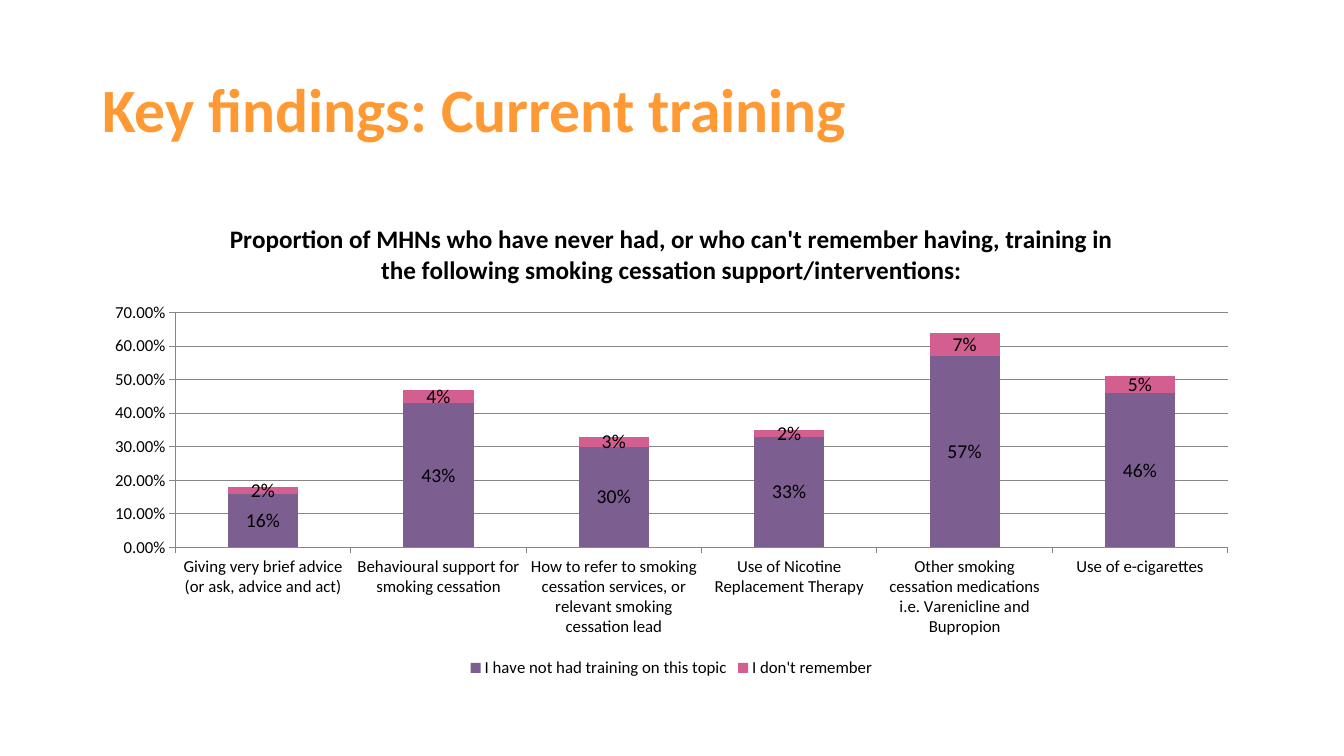
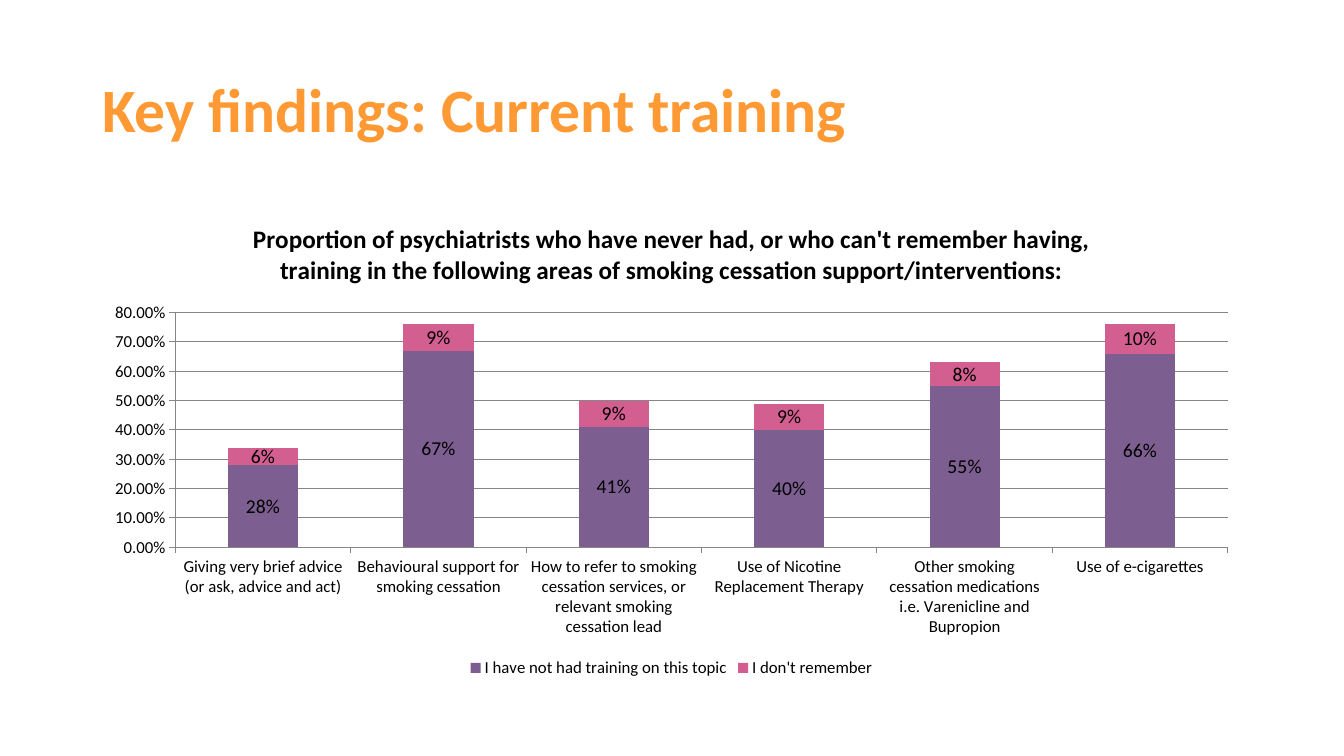
from pptx import Presentation
from pptx.chart.data import CategoryChartData
from pptx.dml.color import RGBColor
from pptx.enum.chart import XL_CHART_TYPE, XL_LABEL_POSITION, XL_LEGEND_POSITION, XL_TICK_MARK
from pptx.enum.text import MSO_ANCHOR, MSO_AUTO_SIZE, PP_ALIGN
from pptx.util import Pt

STACKED = XL_CHART_TYPE.COLUMN_STACKED
LABEL_CENTER = XL_LABEL_POSITION.CENTER
LEGEND_BOTTOM = XL_LEGEND_POSITION.BOTTOM
TICK_OUT = XL_TICK_MARK.OUTSIDE
TICK_NONE = XL_TICK_MARK.NONE
MIDDLE = MSO_ANCHOR.MIDDLE
NO_FIT = MSO_AUTO_SIZE.NONE
LEFT = PP_ALIGN.LEFT

EMU_PER_PX = 914400 / 100.8
FONT = "Calibri"
ORANGE, BLACK, GREY = "FF9933", "000000", "868686"
PURPLE, PINK = "7D5E90", "D25F90"

TITLE = "Key findings: Current training"
TITLE_AREA = (92, 40, 1159, 146)
CHART_AREA = (92, 202, 1159, 480)
TOPICS = [
    "Giving very brief advice (or ask, advice and act)",
    "Behavioural support for smoking cessation",
    "How to refer to smoking cessation services, or relevant smoking cessation lead",
    "Use of Nicotine Replacement Therapy",
    "Other smoking cessation medications i.e. Varenicline and Bupropion",
    "Use of e-cigarettes",
]
ANSWERS = [("I have not had training on this topic", PURPLE), ("I don't remember", PINK)]
FINDINGS = [
    (
        "Proportion of MHNs who have never had, or who can't remember having, "
        "training in the following smoking cessation support/interventions:",
        0.7,
        [[0.16, 0.43, 0.3, 0.33, 0.57, 0.46], [0.02, 0.04, 0.03, 0.02, 0.07, 0.05]],
    ),
    (
        "Proportion of psychiatrists who have never had, or who can't remember having, "
        "training in the following areas of smoking cessation support/interventions:",
        0.8,
        [[0.28, 0.67, 0.41, 0.4, 0.55, 0.66], [0.06, 0.09, 0.09, 0.09, 0.08, 0.1]],
    ),
]


def px(*lengths):
    return [round(length * EMU_PER_PX) for length in lengths]


def set_font(font, size, color, bold=False):
    font.name = FONT
    font.size = Pt(size)
    font.bold = bold
    font.color.rgb = RGBColor.from_string(color)


deck = Presentation()
deck.slide_width, deck.slide_height = px(1344, 756)

for chart_title, axis_top, shares in FINDINGS:
    page = deck.slides.add_slide(deck.slide_layouts[5])

    title = page.shapes.title
    title.left, title.top, title.width, title.height = px(*TITLE_AREA)
    title.text_frame.vertical_anchor = MIDDLE
    title.text_frame.auto_size = NO_FIT
    para = title.text_frame.paragraphs[0]
    para.alignment = LEFT
    para.line_spacing = 0.9
    span = para.add_run()
    span.text = TITLE
    set_font(span.font, 44, ORANGE, bold=True)

    data = CategoryChartData(number_format="0.00%")
    data.categories = TOPICS
    for (answer, color), values in zip(ANSWERS, shares):
        data.add_series(answer, values)
    chart = page.shapes.add_chart(STACKED, *px(*CHART_AREA), data).chart
    set_font(chart.font, 10, BLACK)

    chart.has_title = True
    span = chart.chart_title.text_frame.paragraphs[0].add_run()
    span.text = chart_title
    set_font(span.font, 18, BLACK, bold=True)
    chart.chart_title.include_in_layout = False

    chart.has_legend = True
    chart.legend.position = LEGEND_BOTTOM
    chart.legend.include_in_layout = False
    set_font(chart.legend.font, 12, BLACK)

    for axis in (chart.category_axis, chart.value_axis):
        axis.major_tick_mark = TICK_OUT
        axis.minor_tick_mark = TICK_NONE
        axis.format.line.color.rgb = RGBColor.from_string(GREY)
        set_font(axis.tick_labels.font, 12, BLACK)
    value_axis = chart.value_axis
    value_axis.minimum_scale = 0
    value_axis.maximum_scale = axis_top
    value_axis.major_unit = 0.1
    value_axis.has_major_gridlines = True
    value_axis.major_gridlines.format.line.color.rgb = RGBColor.from_string(GREY)
    value_axis.tick_labels.number_format = "0.00%"
    value_axis.tick_labels.number_format_is_linked = False

    plot = chart.plots[0]
    plot.gap_width = 150
    plot.overlap = 100
    plot.vary_by_categories = False
    for series, (answer, color) in zip(plot.series, ANSWERS):
        series.format.fill.solid()
        series.format.fill.fore_color.rgb = RGBColor.from_string(color)
        labels = series.data_labels
        labels.show_value = True
        labels.number_format = "0%"
        labels.number_format_is_linked = False
        labels.position = LABEL_CENTER
        set_font(labels.font, 14, BLACK)

deck.save("out.pptx")
